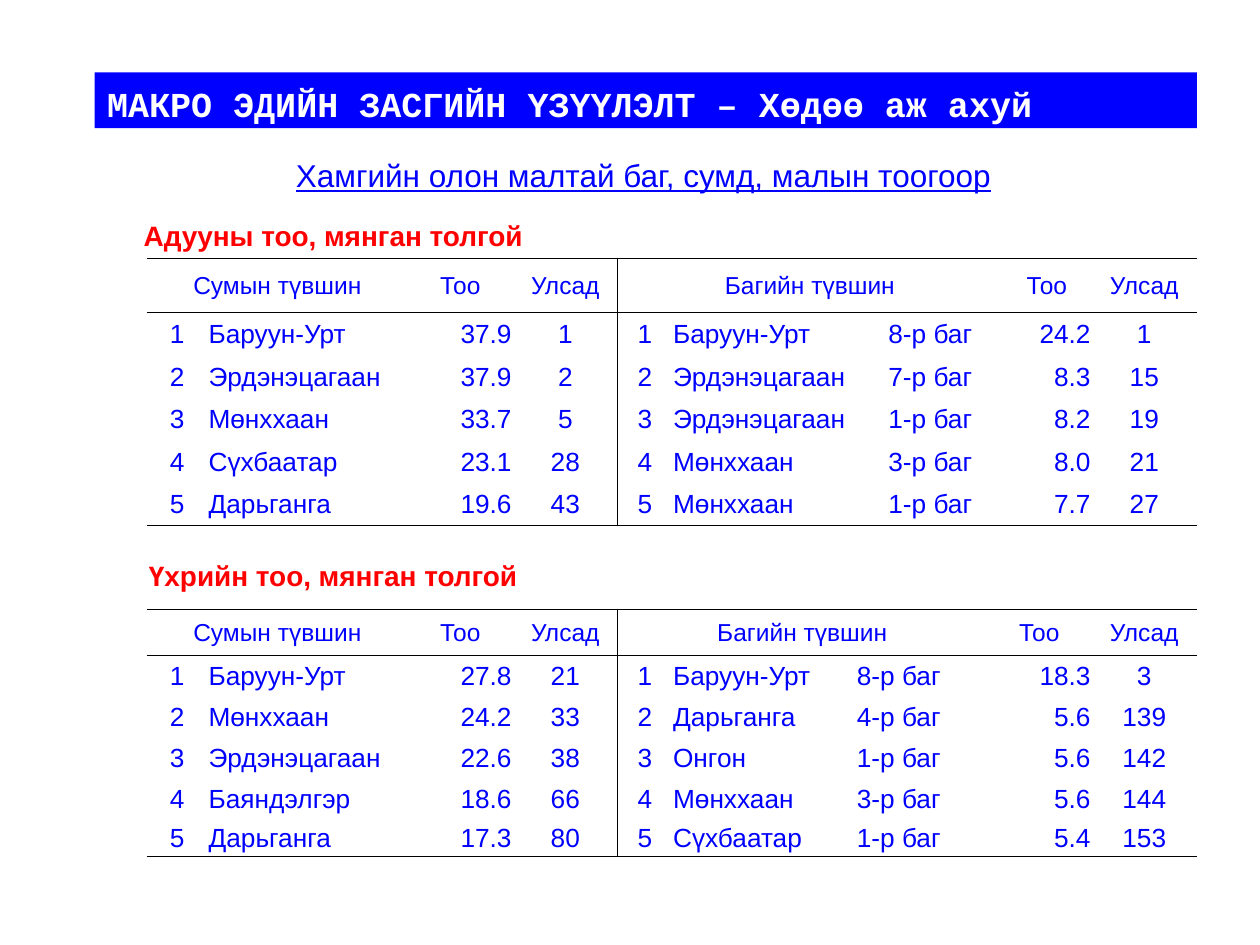
from dataclasses import dataclass

from lxml import etree
from pptx import Presentation
from pptx.dml.color import RGBColor
from pptx.enum.text import MSO_ANCHOR, PP_ALIGN
from pptx.oxml.ns import qn
from pptx.util import Inches, Pt

LEFT, CENTER, RIGHT = PP_ALIGN.LEFT, PP_ALIGN.CENTER, PP_ALIGN.RIGHT
JUSTIFY = PP_ALIGN.JUSTIFY
MIDDLE, TOP = MSO_ANCHOR.MIDDLE, MSO_ANCHOR.TOP

SLIDE_WIDTH, SLIDE_HEIGHT = Inches(10), Inches(7.5)
GRID_COLUMNS = 120  # square grid: 120 columns by 90 rows


@dataclass(frozen=True)
class Theme:
    blue: str = "0000FF"
    red: str = "FF0000"
    white: str = "FFFFFF"
    rule: str = "000000"
    body_font: str = "Arial"
    title_font: str = "Courier New"
    title_size: int = 20
    subtitle_size: int = 18
    heading_size: int = 16
    value_size: int = 15
    header_size: int = 14
    rule_width: float = 0.5


THEME = Theme()

TABLE_LEFT = 14
SUM_COLUMNS = [5.75, 19.1, 10, 10]
ALIGNMENTS = [CENTER, LEFT, RIGHT, CENTER, CENTER, LEFT, LEFT, RIGHT, CENTER]
HEADERS = ["Сумын түвшин", "", "Тоо", "Улсад", "Багийн түвшин", "", "", "Тоо", "Улсад"]
HEADER_SPANS = [(0, 1), (4, 6)]
DIVIDER = len(SUM_COLUMNS)

HORSES = [
    ("Баруун-Урт", "37.9", "1", "Баруун-Урт", "8-р баг", "24.2", "1"),
    ("Эрдэнэцагаан", "37.9", "2", "Эрдэнэцагаан", "7-р баг", "8.3", "15"),
    ("Мөнххаан", "33.7", "5", "Эрдэнэцагаан", "1-р баг", "8.2", "19"),
    ("Сүхбаатар", "23.1", "28", "Мөнххаан", "3-р баг", "8.0", "21"),
    ("Дарьганга", "19.6", "43", "Мөнххаан", "1-р баг", "7.7", "27"),
]
CATTLE = [
    ("Баруун-Урт", "27.8", "21", "Баруун-Урт", "8-р баг", "18.3", "3"),
    ("Мөнххаан", "24.2", "33", "Дарьганга", "4-р баг", "5.6", "139"),
    ("Эрдэнэцагаан", "22.6", "38", "Онгон", "1-р баг", "5.6", "142"),
    ("Баяндэлгэр", "18.6", "66", "Мөнххаан", "3-р баг", "5.6", "144"),
    ("Дарьганга", "17.3", "80", "Сүхбаатар", "1-р баг", "5.4", "153"),
]


def grid(units):
    return round(SLIDE_WIDTH * units / GRID_COLUMNS)


def write_text(frame, text, *, size, color=THEME.blue, font=THEME.body_font,
               bold=False, underline=False, align=LEFT):
    paragraph = frame.paragraphs[0]
    paragraph.alignment = align
    run = paragraph.add_run()
    run.text = text
    run.font.name = font
    run.font.size = Pt(size)
    run.font.bold = bold
    run.font.underline = underline
    run.font.color.rgb = RGBColor.from_string(color)


def add_title(slide, text):
    title = slide.shapes.title
    title.left, title.top, title.width, title.height = map(grid, (9, 6.9, 105, 5.3))
    title.fill.solid()
    title.fill.fore_color.rgb = RGBColor.from_string(THEME.blue)
    frame = title.text_frame
    frame.word_wrap = True
    frame.vertical_anchor = MIDDLE
    frame.margin_top, frame.margin_bottom = Inches(0.08), Inches(0.03)
    write_text(frame, text, size=THEME.title_size, color=THEME.white,
               font=THEME.title_font, bold=True, align=JUSTIFY)


def add_label(slide, text, left, top, height, **text_format):
    label = slide.shapes.add_textbox(grid(left), grid(top), grid(70), grid(height))
    label.text_frame.word_wrap = True
    label.text_frame.vertical_anchor = TOP
    write_text(label.text_frame, text, **text_format)


def set_borders(cell, ruled_edges):
    """Rule the given edges (letters of LRTB) and clear the others."""
    properties = cell._tc.get_or_add_tcPr()
    for edge in "LRTB":
        line = etree.SubElement(properties, qn(f"a:ln{edge}"))
        if edge in ruled_edges:
            line.set("w", str(Pt(THEME.rule_width)))
            fill = etree.SubElement(line, qn("a:solidFill"))
            etree.SubElement(fill, qn("a:srgbClr")).set("val", THEME.rule)
        else:
            etree.SubElement(line, qn("a:noFill"))


def ruled_edges(row, column, last_row):
    edges = ""
    if column == DIVIDER:
        edges += "L"
    if column == DIVIDER - 1:
        edges += "R"
    if row in (0, 1):
        edges += "T"
    if row in (0, last_row):
        edges += "B"
    return edges


def format_cell(cell, edges):
    cell.vertical_anchor = MIDDLE
    cell.margin_left = cell.margin_right = cell.margin_top = Inches(0.01)
    cell.margin_bottom = 0
    set_borders(cell, edges)
    cell.fill.background()


def add_livestock_table(slide, top, bag_columns, row_heights, records):
    rows = [HEADERS]
    for rank, record in enumerate(records, start=1):
        rows.append([str(rank), *record[:3], str(rank), *record[3:]])
    columns = SUM_COLUMNS + bag_columns
    table = slide.shapes.add_table(
        len(rows), len(columns), grid(TABLE_LEFT), grid(top),
        grid(sum(columns)), grid(sum(row_heights))).table
    table.first_row = table.horz_banding = False
    for column, width in zip(table.columns, columns):
        column.width = grid(width)
    for row, height in zip(table.rows, row_heights):
        row.height = grid(height)

    for row, values in enumerate(rows):
        for column, value in enumerate(values):
            cell = table.cell(row, column)
            format_cell(cell, ruled_edges(row, column, len(records)))
            if value:
                write_text(cell.text_frame, value,
                           size=THEME.value_size if row else THEME.header_size,
                           align=ALIGNMENTS[column] if row else CENTER)
    for first, last in HEADER_SPANS:
        table.cell(0, first).merge(table.cell(0, last))


def main():
    presentation = Presentation()
    presentation.slide_width, presentation.slide_height = SLIDE_WIDTH, SLIDE_HEIGHT
    slide = presentation.slides.add_slide(presentation.slide_layouts[5])

    add_title(slide, "МАКРО ЭДИЙН ЗАСГИЙН ҮЗҮҮЛЭЛТ – Хөдөө аж ахуй")
    add_label(slide, "Хамгийн олон малтай баг, сумд, малын тоогоор", 27, 14.3, 4.8,
              size=THEME.subtitle_size, underline=True)

    heading = dict(size=THEME.heading_size, color=THEME.red, bold=True)
    add_label(slide, "Адууны тоо, мянган толгой", 12.5, 20.2, 4.4, **heading)
    add_livestock_table(slide, 24.6, [5.15, 20.5, 10.95, 8.55, 10],
                        [5.2] + [4.05] * 5, HORSES)
    add_label(slide, "Үхрийн тоо, мянган толгой", 13, 52.6, 4.4, **heading)
    add_livestock_table(slide, 58, [5.15, 17.5, 12.5, 10, 10],
                        [4.45] + [3.9] * 4 + [3.5], CATTLE)
    presentation.save("out.pptx")


if __name__ == "__main__":
    main()
